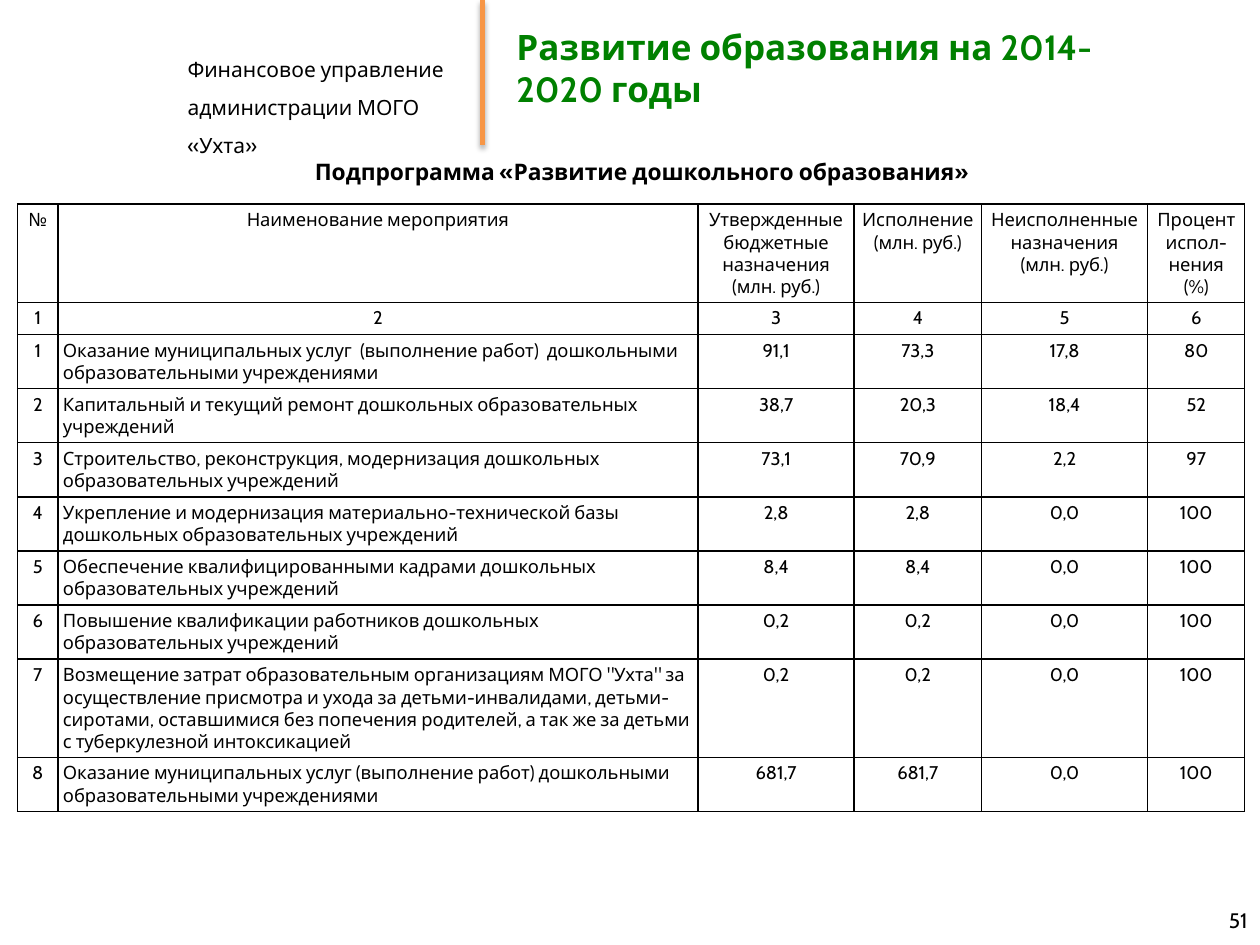
"""Build the slide on preschool education spending with its results table."""
import pptx
import pptx.util
import pptx.dml.color
import pptx.enum.shapes
import pptx.enum.text
import pptx.oxml
import lxml.etree

BLACK = pptx.dml.color.RGBColor(0x00, 0x00, 0x00)
GREEN = pptx.dml.color.RGBColor(0x00, 0x80, 0x00)
ORANGE = pptx.dml.color.RGBColor(0xF7, 0x96, 0x46)
NS = 'xmlns:a="http://schemas.openxmlformats.org/drawingml/2006/main"'
ALIGN = pptx.enum.text.PP_ALIGN
ANCHOR = pptx.enum.text.MSO_ANCHOR
COLS, ROWS = 100, 75

prs = pptx.Presentation()
prs.slide_width = pptx.util.Inches(10)
prs.slide_height = pptx.util.Inches(7.5)
s = prs.slides.add_slide(prs.slide_layouts[6])
col = prs.slide_width / COLS
row = prs.slide_height / ROWS


def grid(x, y, w, h):
    return [round(v * unit) for v, unit in zip((x, y, w, h), (col, row, col, row))]


def write(tf, text, align, size, color=BLACK, bold=False, spacing=None):
    for i, line in enumerate(text.split("\n")):
        p = tf.paragraphs[0] if i == 0 else tf.add_paragraph()
        for name, value in {"alignment": align, "line_spacing": spacing}.items():
            setattr(p, name, value)
        r = p.add_run()
        r.text = line
        font = {"name": "Cabin", "size": pptx.util.Pt(size), "bold": bold}
        for name, value in font.items():
            setattr(r.font, name, value)
        r.font.color.rgb = color


texts = [
    ((13.9, 3, 25, 6.6), "Финансовое управление\nадминистрации МОГО «Ухта»", ANCHOR.TOP,
     {"align": ALIGN.LEFT, "size": 12, "spacing": 1.5}),
    ((2, 12, 97.8, 3.2), "Подпрограмма «Развитие дошкольного образования»", ANCHOR.TOP,
     {"align": ALIGN.CENTER, "size": 13, "bold": True}),
    ((40, 0.3, 54.1, 10.1), "Развитие образования на 2014-2020 годы", ANCHOR.MIDDLE,
     {"align": ALIGN.LEFT, "size": 20, "color": GREEN, "bold": True}),
    ((76.7, 71, 23.3, 4), "51", ANCHOR.MIDDLE, {"align": ALIGN.RIGHT, "size": 12}),
]
for place, text, anchor, style in texts:
    tf = s.shapes.add_textbox(*grid(*place)).text_frame
    for name, value in {"word_wrap": True, "vertical_anchor": anchor}.items():
        setattr(tf, name, value)
    write(tf, text, **style)

x, top, _, bottom = grid(38.3, 0, 0, 11.5)
divider = s.shapes.add_connector(pptx.enum.shapes.MSO_CONNECTOR.STRAIGHT, x, top, x, bottom)
divider.line.color.rgb = ORANGE
divider.line.width = pptx.util.Pt(3)
divider._element.spPr.append(pptx.oxml.parse_xml(
    f'<a:effectLst {NS}><a:outerShdw blurRad="{pptx.util.Pt(3.1)}" dist="{pptx.util.Pt(1.8)}" '
    'dir="5400000" rotWithShape="0"><a:srgbClr val="000000"><a:alpha val="35000"/>'
    '</a:srgbClr></a:outerShdw></a:effectLst>'))

data = [
    ["№", "Наименование мероприятия", "Утвержденные бюджетные назначения\n(млн. руб.)",
     "Исполнение\n(млн. руб.)", "Неисполненные назначения\n(млн. руб.)",
     "Процент испол-нения\n(%)"],
    ["1", "2", "3", "4", "5", "6"],
    ["1", "Оказание муниципальных услуг  (выполнение работ)  дошкольными "
     "образовательными учреждениями", "91,1", "73,3", "17,8", "80"],
    ["2", "Капитальный и текущий ремонт дошкольных образовательных учреждений",
     "38,7", "20,3", "18,4", "52"],
    ["3", "Строительство, реконструкция, модернизация дошкольных образовательных учреждений",
     "73,1", "70,9", "2,2", "97"],
    ["4", "Укрепление и модернизация материально-технической базы дошкольных "
     "образовательных учреждений", "2,8", "2,8", "0,0", "100"],
    ["5", "Обеспечение квалифицированными кадрами дошкольных образовательных учреждений",
     "8,4", "8,4", "0,0", "100"],
    ["6", "Повышение квалификации работников дошкольных образовательных учреждений",
     "0,2", "0,2", "0,0", "100"],
    ["7", "Возмещение затрат образовательным организациям МОГО \"Ухта\" за осуществление "
     "присмотра и ухода за детьми-инвалидами, детьми-сиротами, оставшимися без попечения "
     "родителей, а так же за детьми с туберкулезной интоксикацией",
     "0,2", "0,2", "0,0", "100"],
    ["8", "Оказание муниципальных услуг (выполнение работ) дошкольными "
     "образовательными учреждениями", "681,7", "681,7", "0,0", "100"],
]
widths = [3.2, 50.8, 12.4, 10.1, 13.2, 7.7]
heights = [7.7, 2.4] + [4.2] * 6 + [7.7, 4.2]
table = s.shapes.add_table(len(data), len(widths),
                           *grid(1.4, 16.2, sum(widths), sum(heights))).table
for name in ("first_row", "horz_banding"):
    setattr(table, name, False)
for c, width in enumerate(widths):
    table.columns[c].width = round(width * col)
for n, height in enumerate(heights):
    table.rows[n].height = round(height * row)

for n, values in enumerate(data):
    for c, value in enumerate(values):
        cell = table.cell(n, c)
        for side in ("left", "top", "right", "bottom"):
            setattr(cell, f"margin_{side}", pptx.util.Inches(0.04))
        for side in "LRTB":
            cell._tc.get_or_add_tcPr().append(pptx.oxml.parse_xml(
                f'<a:ln{side} {NS} w="{pptx.util.Pt(1)}"><a:solidFill>'
                f'<a:srgbClr val="{BLACK}"/></a:solidFill></a:ln{side}>'))
        cell.fill.background()
        align = ALIGN.LEFT if c == 1 and n > 1 else ALIGN.CENTER
        write(cell.text_frame, value, align, 10.5)

prs.save("out.pptx")
